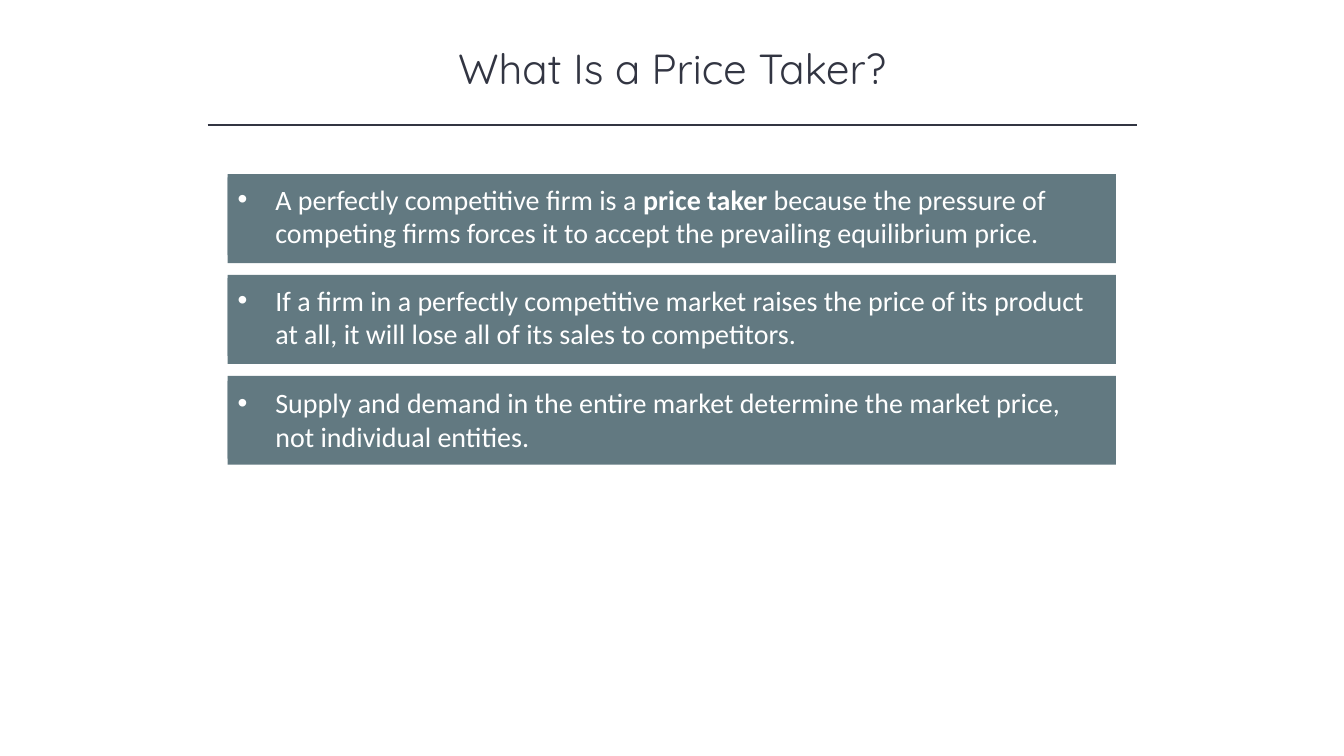
from lxml import etree
from pptx import Presentation
from pptx.dml.color import RGBColor
from pptx.enum.shapes import MSO_CONNECTOR, MSO_SHAPE
from pptx.enum.text import MSO_ANCHOR, MSO_AUTO_SIZE, PP_ALIGN
from pptx.oxml.ns import qn
from pptx.util import Cm, Pt

RECT = MSO_SHAPE.RECTANGLE
STRAIGHT = MSO_CONNECTOR.STRAIGHT
TOP = MSO_ANCHOR.TOP
GROW = MSO_AUTO_SIZE.SHAPE_TO_FIT_TEXT
LEFT, CENTER = PP_ALIGN.LEFT, PP_ALIGN.CENTER

PANEL_LEFT, PANEL_TOP, PANEL_WIDTH, PANEL_HEIGHT = 5.74, 4.39, 22.38, 2.24
PANEL_PITCH = 2.54
TEXT_HEIGHT = 1.96

# Text inset from the panel top, text width, runs as (text, bold)
POINTS = [
    (0.08, 21.69, [
        ("A perfectly competitive firm is a ", False),
        ("price taker ", True),
        ("because the pressure of competing firms forces it to accept "
         "the prevailing equilibrium price.", False)]),
    (0.08, 22.15, [
        ("If a firm in a perfectly competitive market raises the price of "
         "its product at all, it will lose all of its sales to competitors.",
         False)]),
    (0.13, 21.69, [
        ("Supply and demand in the entire market determine the market "
         "price, not individual entities.", False)]),
]


def rgb(value):
    return RGBColor.from_string(value)


class Deck:
    INK, SLATE, WHITE = "323542", "627981", "FFFFFF"
    HEADING, BODY = "Quicksand", "Calibri"

    def __init__(self):
        self.prs = Presentation()
        self.prs.slide_width, self.prs.slide_height = Cm(33.87), Cm(19.05)
        self.s = self.prs.slides.add_slide(self.prs.slide_layouts[6])

    def font(self, p, name, size, color):
        p.font.name, p.font.size = name, Pt(size)
        p.font.color.rgb = rgb(color)

    def title(self, text, x, y, w, h):
        tf = self.s.shapes.add_textbox(Cm(x), Cm(y), Cm(w), Cm(h)).text_frame
        tf.word_wrap, tf.auto_size = True, GROW
        p = tf.paragraphs[0]
        p.text, p.alignment = text, CENTER
        self.font(p, self.HEADING, 30, self.INK)

    def rule(self, x1, x2, y):
        line = self.s.shapes.add_connector(
            STRAIGHT, Cm(x1), Cm(y), Cm(x2), Cm(y))
        line.line.color.rgb, line.line.width = rgb(self.INK), Pt(1)
        etree.SubElement(line._element.spPr, qn("a:effectLst"))

    def rect(self, group, x, y, w, h):
        sp = group.shapes.add_shape(RECT, Cm(x), Cm(y), Cm(w), Cm(h))
        sp.shadow.inherit = False
        sp.fill.solid()
        sp.fill.fore_color.rgb = rgb(self.SLATE)
        sp.line.fill.background()
        return sp

    def bullet(self, p):
        pPr = p._p.get_or_add_pPr()
        pPr.set("marL", str(Cm(0.95)))
        pPr.set("indent", str(-Cm(0.95)))
        bu_font = etree.Element(qn("a:buFont"), typeface="Arial")
        bu_char = etree.Element(qn("a:buChar"), char="•")
        pPr.insert(0, bu_font)
        bu_font.addnext(bu_char)

    def point(self, y, inset, width, runs):
        """Add a panel and its bulleted text as one group."""
        group = self.s.shapes.add_group_shape()
        self.rect(group, PANEL_LEFT, y, PANEL_WIDTH, PANEL_HEIGHT)
        sp = self.rect(group, PANEL_LEFT, y + inset, width, TEXT_HEIGHT)
        tf = sp.text_frame
        tf.word_wrap, tf.auto_size, tf.vertical_anchor = True, GROW, TOP
        p = tf.paragraphs[0]
        p.alignment = LEFT
        self.font(p, self.BODY, 20, self.WHITE)
        self.bullet(p)
        for text, bold in runs:
            r = p.add_run()
            r.text, r.font.bold = text, bold


def main():
    deck = Deck()
    deck.title("What Is a Price Taker?", 4.24, 0.94, 25.4, 1.55)
    deck.rule(5.23, 28.65, 3.15)
    for i, (inset, width, runs) in enumerate(POINTS):
        deck.point(PANEL_TOP + i * PANEL_PITCH, inset, width, runs)
    deck.prs.save("out.pptx")


if __name__ == "__main__":
    main()
